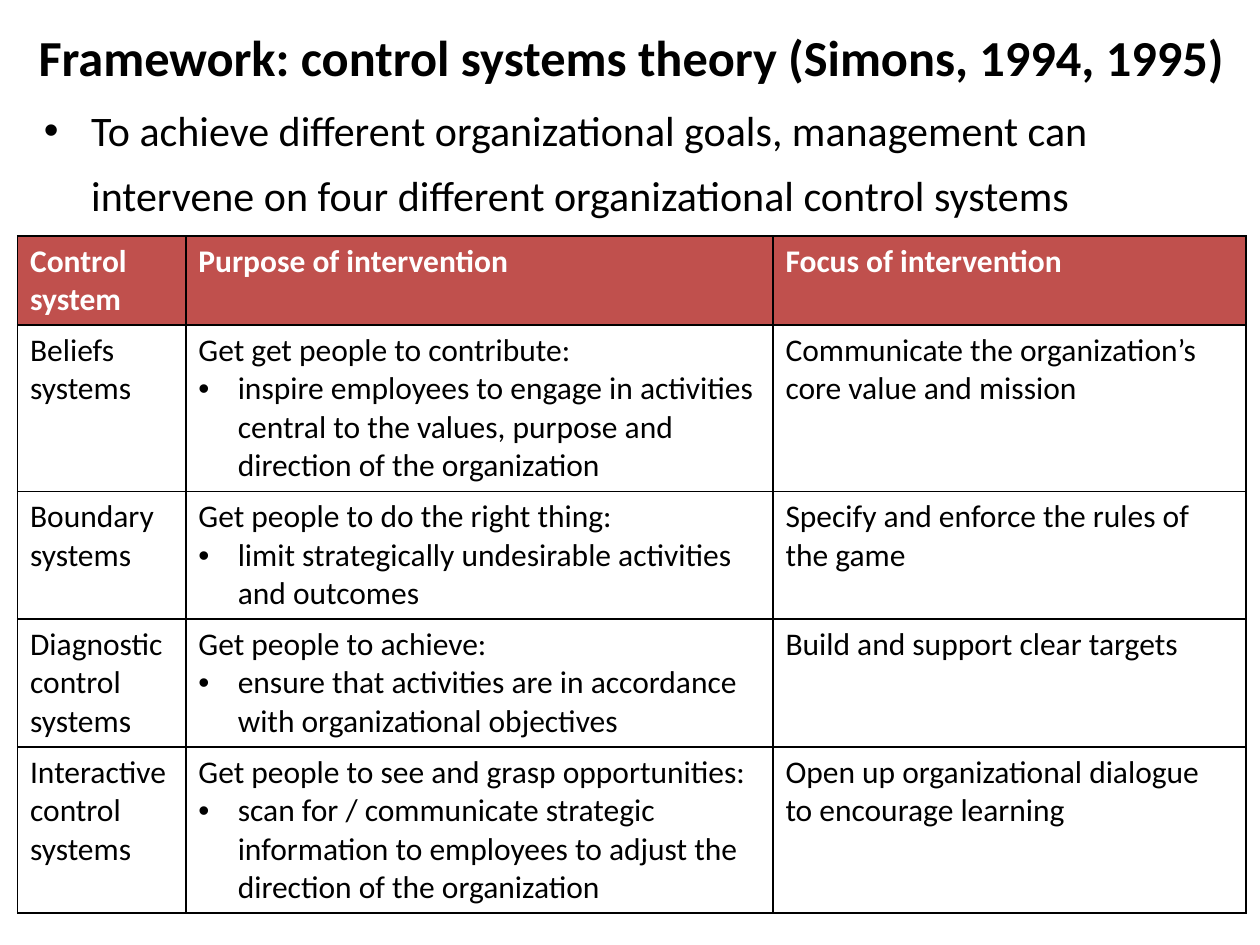
import pptx
import pptx.dml.color
import pptx.enum.text
import pptx.oxml
import pptx.oxml.ns
import pptx.util

Pt = pptx.util.Pt
Align = pptx.enum.text.PP_ALIGN
Anchor = pptx.enum.text.MSO_ANCHOR


def shade(code):
    return pptx.dml.color.RGBColor.from_string(code)


def node(text):
    return pptx.oxml.parse_xml(text.replace(" ", f" {pptx.oxml.ns.nsdecls('a')} ", 1))


class Page:
    font = "Calibri"
    ink = "000000"
    paper = "FFFFFF"
    head = "C0504D"

    def __init__(self, deck):
        self.slide = deck.slides.add_slide(deck.slide_layouts[6])

    def style(self, para, size, color=ink, bold=False):
        for run in para.runs:
            run.font.name = self.font
            run.font.size = Pt(size)
            run.font.bold = bold
            run.font.color.rgb = shade(color)

    def bullet(self, para, indent):
        props = para._p.get_or_add_pPr()
        props.set("marL", str(Pt(indent)))
        props.set("indent", str(-Pt(indent)))
        props.append(node('<a:buFont typeface="Arial"/>'))
        props.append(node('<a:buChar char="•"/>'))

    def text(self, words, box, size, bold=False, anchor=Anchor.TOP):
        frame = self.slide.shapes.add_textbox(*map(Pt, box)).text_frame
        frame.word_wrap = True
        frame.vertical_anchor = anchor
        frame.text = words
        para = frame.paragraphs[0]
        self.style(para, size, bold=bold)
        return para

    def border(self, cell):
        props = cell._tc.get_or_add_tcPr()
        for side in "LRTB":
            props.append(node(
                f'<a:ln{side} w="{Pt(1)}"><a:solidFill><a:srgbClr val="{self.ink}"/>'
                f'</a:solidFill></a:ln{side}>'))

    def cell(self, cell, words, top):
        self.border(cell)
        if top:
            cell.fill.solid()
            cell.fill.fore_color.rgb = shade(self.head)
        else:
            cell.fill.background()
        cell.text_frame.text = words
        for i, para in enumerate(cell.text_frame.paragraphs):
            self.style(para, 18, self.paper if top else self.ink, top)
            if i:
                self.bullet(para, 22.5)

    def table(self, rows, left, top, wides, highs):
        grid = self.slide.shapes.add_table(
            len(rows), len(wides), Pt(left), Pt(top), Pt(sum(wides)), Pt(sum(highs))).table
        grid.horz_banding = False
        for col, wide in zip(grid.columns, wides):
            col.width = Pt(wide)
        for r, (row, high) in enumerate(zip(rows, highs)):
            grid.rows[r].height = Pt(high)
            for c, words in enumerate(row):
                self.cell(grid.cell(r, c), words, r == 0)


ROWS = [
    ("Control system", "Purpose of intervention", "Focus of intervention"),
    ("Beliefs systems",
     "Get get people to contribute:\ninspire employees to engage in activities "
     "central to the values, purpose and direction of the organization",
     "Communicate the organization’s core value and mission"),
    ("Boundary systems",
     "Get people to do the right thing:\nlimit strategically undesirable "
     "activities and outcomes",
     "Specify and enforce the rules of the game"),
    ("Diagnostic control systems",
     "Get people to achieve:\nensure that activities are in accordance with "
     "organizational objectives",
     "Build and support clear targets"),
    ("Interactive control systems",
     "Get people to see and grasp opportunities:\nscan for / communicate strategic "
     "information to employees to adjust the direction of the organization",
     "Open up organizational dialogue to encourage learning"),
]


def main():
    deck = pptx.Presentation()
    deck.slide_width, deck.slide_height = Pt(720), Pt(540)
    page = Page(deck)
    title = page.text("Framework: control systems theory (Simons, 1994, 1995)",
                      (5, 5.8, 712, 52.5), 28.8, True, Anchor.MIDDLE)
    title.alignment = Align.CENTER
    lead = page.text("To achieve different organizational goals, management can "
                     "intervene on four different organizational control systems",
                     (18, 47.5, 683.3, 451.4), 24)
    lead.line_spacing = 1.3
    lead.space_before = Pt(4.8)
    page.bullet(lead, 27)
    page.table(ROWS, 10, 134.8, (96.2, 335.5, 270.2), (51, 95, 73, 73, 95))
    deck.save("out.pptx")


if __name__ == "__main__":
    main()
